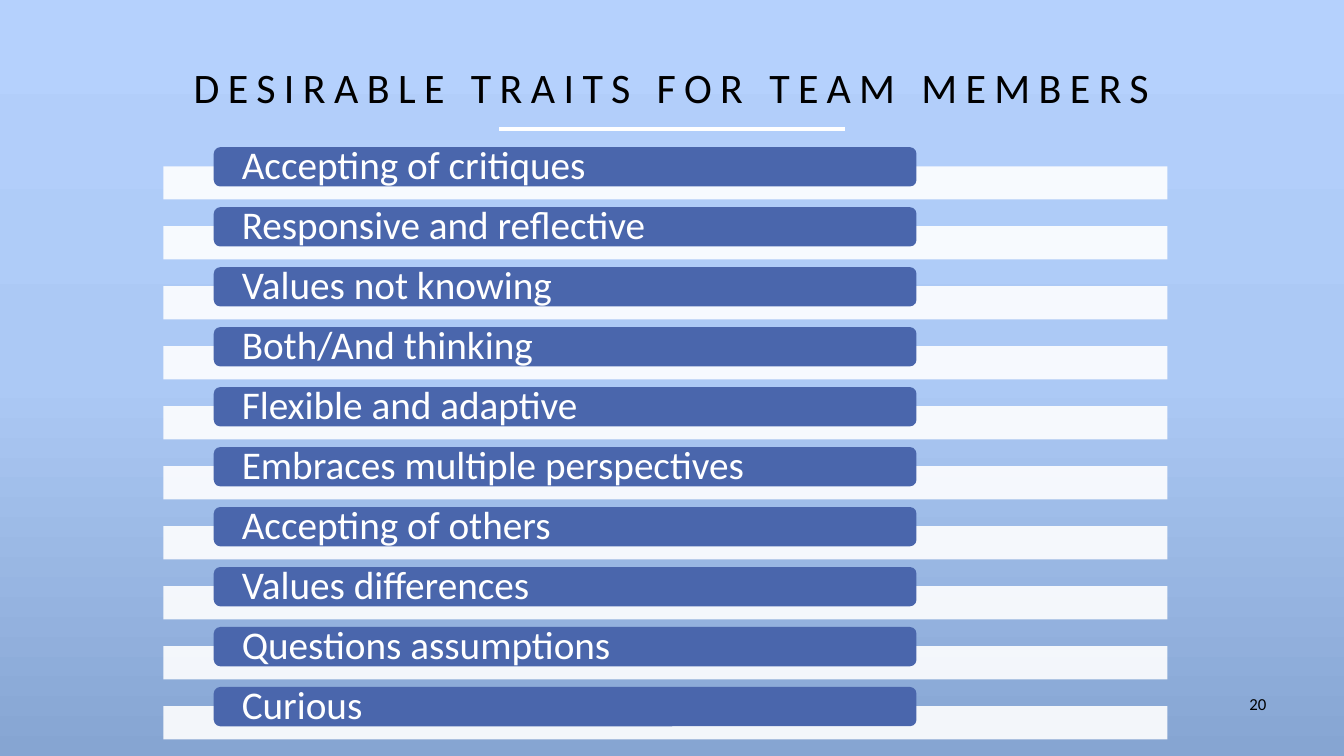
from copy import deepcopy

from pptx import Presentation
from pptx.dml.color import RGBColor
from pptx.enum.shapes import MSO_CONNECTOR as Connector, MSO_SHAPE as Shape
from pptx.enum.text import MSO_ANCHOR as Anchor, MSO_AUTO_SIZE as AutoSize, PP_ALIGN as Align
from pptx.oxml.ns import qn
from pptx.oxml.xmlchemy import OxmlElement
from pptx.util import Inches, Pt

COLORS = {
    "sky_top": "B5D1FD",
    "sky_middle": "ACC9F5",
    "sky_bottom": "86A5D2",
    "pill": "4A66AC",
    "white": "FFFFFF",
    "black": "000000",
}
TRAITS = [
    "Accepting of critiques",
    "Responsive and reflective",
    "Values not knowing",
    "Both/And thinking",
    "Flexible and adaptive",
    "Embraces multiple perspectives",
    "Accepting of others",
    "Values differences",
    "Questions assumptions",
    "Curious",
]
FIRST_PILL_TOP = 1.46
ROW_PITCH = 0.595
STRIP_DROP = 0.19


def color(name):
    return RGBColor.from_string(COLORS[name])


def write(shape, text, size, ink="black", align=Align.LEFT, anchor=Anchor.MIDDLE,
          insets=(0.1, 0.05), line_spacing=1.0, tracking=0):
    """Put one formatted paragraph in a shape; insets are (side, top and bottom) in inches."""
    frame = shape.text_frame
    frame.auto_size = AutoSize.NONE
    frame.word_wrap = True
    frame.vertical_anchor = anchor
    frame.margin_left = frame.margin_right = Inches(insets[0])
    frame.margin_top = frame.margin_bottom = Inches(insets[1])
    paragraph = frame.paragraphs[0]
    paragraph.alignment = align
    paragraph.line_spacing = line_spacing
    run = paragraph.add_run()
    run.text = text
    run.font.name = "Calibri"
    run.font.size = Pt(size)
    run.font.color.rgb = color(ink)
    if tracking:
        run.font._element.set("spc", str(tracking * 100))


class TraitSlide:
    def __init__(self, deck):
        self.slide = deck.slides.add_slide(deck.slide_layouts[5])
        self.shapes = self.slide.shapes

    def background(self, *names):
        """Fill the background with three evenly spaced colours, top to bottom."""
        fill = self.slide.background.fill
        fill.gradient()
        fill.gradient_angle = 270
        stop_list = self.slide.element.find(".//" + qn("a:gsLst"))
        stop_list.append(deepcopy(stop_list[-1]))
        for index, (stop, name) in enumerate(zip(fill.gradient_stops, names)):
            stop.position = index / (len(names) - 1)
            stop.color.rgb = color(name)

    def title(self, text, left, top, width, height):
        title = self.shapes.title
        title.left, title.top = Inches(left), Inches(top)
        title.width, title.height = Inches(width), Inches(height)
        write(title, text, 30, align=Align.CENTER, line_spacing=0.9, tracking=6)

    def rule(self, left, right, y):
        rule = self.shapes.add_connector(
            Connector.STRAIGHT, Inches(left), Inches(y), Inches(right), Inches(y))
        rule.line.color.rgb = color("white")
        rule.line.width = Pt(3)
        rule._element.spPr.append(OxmlElement("a:effectLst"))

    def box(self, kind, left, top, width, height, fill, opacity=100):
        box = self.shapes.add_shape(
            kind, Inches(left), Inches(top), Inches(width), Inches(height))
        box.shadow.inherit = False
        box.line.fill.background()
        box.fill.solid()
        box.fill.fore_color.rgb = color(fill)
        if opacity < 100:
            alpha = OxmlElement("a:alpha")
            alpha.set("val", str(opacity * 1000))
            box._element.spPr.find(".//" + qn("a:srgbClr")).append(alpha)
        return box

    def trait(self, text, top):
        self.box(Shape.RECTANGLE, 1.62, top + STRIP_DROP, 9.96, 0.33, "white", opacity=90)
        pill = self.box(Shape.ROUNDED_RECTANGLE, 2.12, top, 6.97, 0.39, "pill")
        write(pill, text, 28, ink="white", insets=(0.26, 0), line_spacing=0.9)

    def page_number(self, text, left, top, width, height):
        number = self.shapes.add_textbox(
            Inches(left), Inches(top), Inches(width), Inches(height))
        write(number, text, 12, align=Align.RIGHT, anchor=Anchor.TOP, insets=(0.11, 0.05))


def main():
    deck = Presentation()
    deck.slide_width, deck.slide_height = Inches(13.33), Inches(7.5)
    page = TraitSlide(deck)
    page.background("sky_top", "sky_middle", "sky_bottom")
    page.rule(4.95, 8.38, 1.28)
    page.title("DESIRABLE TRAITS FOR TEAM MEMBERS", 0, 0.53, 13.33, 0.73)
    for row, trait in enumerate(TRAITS):
        page.trait(trait, FIRST_PILL_TOP + row * ROW_PITCH)
    page.page_number("20", 9.56, 6.83, 3.11, 0.52)
    deck.save("out.pptx")


if __name__ == "__main__":
    main()
